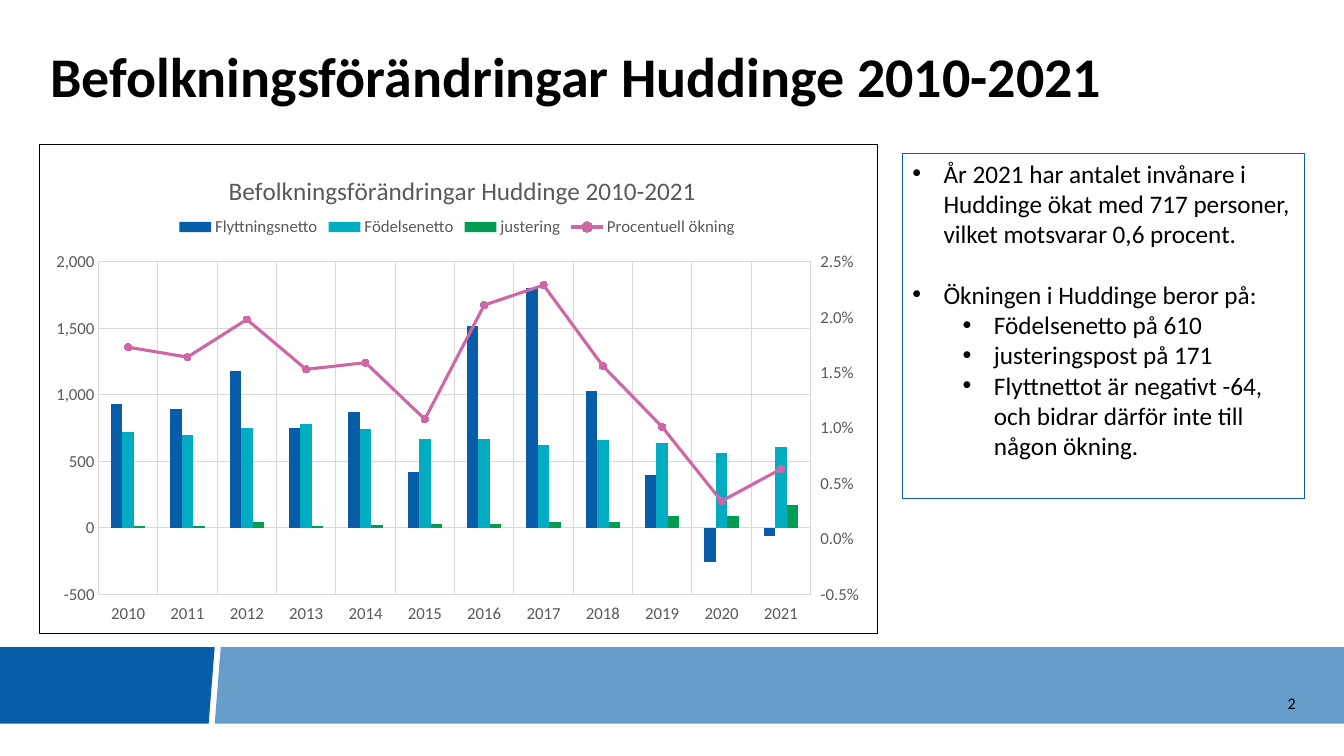
"""Build the Huddinge population change slide."""
from dataclasses import dataclass

from lxml import etree
from pptx import Presentation
from pptx.chart.data import CategoryChartData
from pptx.dml.color import RGBColor
from pptx.enum.chart import (XL_CHART_TYPE, XL_LEGEND_POSITION, XL_MARKER_STYLE,
                             XL_TICK_LABEL_POSITION, XL_TICK_MARK)
from pptx.enum.shapes import MSO_SHAPE
from pptx.enum.text import MSO_ANCHOR, PP_ALIGN
from pptx.oxml import parse_xml
from pptx.oxml.ns import nsdecls, qn
from pptx.util import Inches, Pt


@dataclass
class Theme:
    font: str = "Calibri"
    black: str = "000000"
    gray: str = "595959"
    grid: str = "D9D9D9"
    blue: str = "085DA9"
    sky: str = "669DCB"
    teal: str = "00ADC0"
    green: str = "009C52"
    pink: str = "CE68A5"
    title: float = 40
    body: float = 18
    label: float = 12
    page: float = 11.5


T = Theme()
TITLE = "Befolkningsförändringar Huddinge 2010-2021"
PAGE = "2"
NOTES = [
    (0, 0, "År 2021 har antalet invånare i Huddinge ökat med 717 personer, "
           "vilket motsvarar 0,6 procent."),
    (0, 21.6, "Ökningen i Huddinge beror på:"),
    (1, 0, "Födelsenetto på 610"),
    (1, 0, "justeringspost på 171"),
    (1, 0, "Flyttnettot är negativt -64, och bidrar därför inte till någon ökning."),
]
YEARS = [str(year) for year in range(2010, 2022)]
BARS = [
    ("Flyttningsnetto", T.blue,
     [930, 890, 1180, 750, 870, 420, 1520, 1800, 1030, 400, -260, -60]),
    ("Födelsenetto", T.teal,
     [720, 700, 750, 780, 740, 670, 670, 620, 660, 640, 560, 610]),
    ("justering", T.green, [10, 10, 40, 10, 20, 30, 30, 40, 40, 90, 90, 170]),
]
RATE = ("Procentuell ökning",
        [0.0173, 0.0164, 0.0198, 0.0153, 0.0159, 0.0108,
         0.0211, 0.0229, 0.0156, 0.0101, 0.0034, 0.0063])
BANDS = [
    (T.sky, [(2.19, 6.42), (13.33, 6.42), (13.33, 7.18), (2.13, 7.18)]),
    (T.blue, [(0, 6.42), (2.13, 6.42), (2.07, 7.18), (0, 7.18)]),
]
RIGHT_AXES = f"""<c:axes {nsdecls('c')}>
<c:valAx><c:axId val="9002"/>
<c:scaling><c:orientation val="minMax"/><c:max val="0.025"/><c:min val="-0.005"/></c:scaling>
<c:delete val="0"/><c:axPos val="r"/><c:numFmt formatCode="0.0%" sourceLinked="0"/>
<c:majorTickMark val="out"/><c:minorTickMark val="none"/><c:tickLblPos val="nextTo"/>
<c:crossAx val="9001"/><c:crosses val="max"/><c:crossBetween val="between"/>
<c:majorUnit val="0.005"/></c:valAx>
<c:catAx><c:axId val="9001"/><c:scaling><c:orientation val="minMax"/></c:scaling>
<c:delete val="1"/><c:axPos val="b"/><c:majorTickMark val="none"/>
<c:minorTickMark val="none"/><c:tickLblPos val="nextTo"/><c:crossAx val="9002"/>
<c:crosses val="autoZero"/></c:catAx></c:axes>"""


def color(code):
    return RGBColor.from_string(code)


def style(font, size, code, bold=False):
    font.name, font.size, font.bold = T.font, Pt(size), bold
    font.color.rgb = color(code)


def stroke(line, code, width):
    line.color.rgb, line.width = color(code), Pt(width)


def add_band(slide, code, points):
    spots = [(Inches(x), Inches(y)) for x, y in points]
    pen = slide.shapes.build_freeform(*spots[0])
    pen.add_line_segments(spots[1:], close=True)
    band = pen.convert_to_shape()
    band.shadow.inherit = False
    band.fill.solid()
    band.fill.fore_color.rgb = color(code)
    band.line.fill.background()


def add_text(slide, place, text, size, bold=False, align=PP_ALIGN.LEFT, space=1.0):
    frame = slide.shapes.add_textbox(*map(Inches, place)).text_frame
    frame.word_wrap, frame.vertical_anchor = True, MSO_ANCHOR.MIDDLE
    frame.text = text
    para = frame.paragraphs[0]
    para.alignment, para.line_spacing = align, space
    style(para.runs[0].font, size, T.black, bold)


def add_notes(slide):
    box = slide.shapes.add_shape(MSO_SHAPE.RECTANGLE,
                                 *map(Inches, (8.95, 1.52, 3.99, 3.43)))
    box.shadow.inherit = False
    box.fill.background()
    stroke(box.line, T.blue, 0.75)
    frame = box.text_frame
    frame.word_wrap, frame.vertical_anchor = True, MSO_ANCHOR.TOP
    for i, (level, gap, text) in enumerate(NOTES):
        para = frame.add_paragraph() if i else frame.paragraphs[0]
        para.text, para.level, para.alignment = text, level, PP_ALIGN.LEFT
        if gap:
            para.space_before = Pt(gap)
        props = para._p.get_or_add_pPr()
        props.set("marL", str(Inches(0.31 + 0.5 * level)))
        props.set("indent", str(Inches(-0.31)))
        etree.SubElement(props, qn("a:buFont")).set("typeface", "Arial")
        etree.SubElement(props, qn("a:buChar")).set("char", "•")
        style(para.runs[0].font, T.body, T.black)


def set_place(node, after, **spots):
    for old in node.findall(qn("c:layout")):
        node.remove(old)
    inner = '<c:layoutTarget val="inner"/>' if "w" in spots else ""
    modes = "".join(f'<c:{key}Mode val="edge"/>' for key in spots if key in "xy")
    sizes = "".join(f'<c:{key} val="{val}"/>' for key, val in spots.items())
    layout = parse_xml(f'<c:layout {nsdecls("c")}><c:manualLayout>{inner}{modes}{sizes}'
                       '</c:manualLayout></c:layout>')
    if after is None:
        node.insert(0, layout)
    else:
        node.find(qn(after)).addnext(layout)


def add_rate(chart):
    area = chart._chartSpace.chart.plotArea
    bars = area.find(qn("c:barChart"))
    ser = bars.findall(qn("c:ser"))[-1]
    for flag in ser.findall(qn("c:invertIfNegative")):
        ser.remove(flag)
    lines = parse_xml(f'<c:lineChart {nsdecls("c")}><c:grouping val="standard"/>'
                      '<c:varyColors val="0"/><c:marker val="1"/>'
                      '<c:axId val="9001"/><c:axId val="9002"/></c:lineChart>')
    lines.insert(2, ser)
    bars.addnext(lines)
    spot = area.findall(qn("c:valAx"))[-1]
    for axis in reversed(list(parse_xml(RIGHT_AXES))):
        spot.addnext(axis)
    rate = chart.plots[1].series[0]
    rate.smooth = False
    stroke(rate.format.line, T.pink, 2.25)
    rate.marker.style, rate.marker.size = XL_MARKER_STYLE.CIRCLE, 5
    rate.marker.format.fill.solid()
    rate.marker.format.fill.fore_color.rgb = color(T.pink)
    stroke(rate.marker.format.line, T.pink, 0.75)
    return type(chart.value_axis)(area.findall(qn("c:valAx"))[1])


def add_graph(slide):
    data = CategoryChartData(number_format="#,##0")
    data.categories = YEARS
    for name, _, values in BARS:
        data.add_series(name, values)
    data.add_series(*RATE, number_format="0.0%")
    chart = slide.shapes.add_chart(XL_CHART_TYPE.COLUMN_CLUSTERED,
                                   *map(Inches, (0.39, 1.43, 8.32, 4.86)), data).chart
    style(chart.font, T.label, T.black)
    plot = chart.plots[0]
    plot.gap_width, plot.overlap, plot.vary_by_categories = 219, 0, False
    for ser, (_, code, _) in zip(plot.series, BARS):
        ser.invert_if_negative = False
        ser.format.fill.solid()
        ser.format.fill.fore_color.rgb = color(code)
    cats, left, right = chart.category_axis, chart.value_axis, add_rate(chart)
    for axis in (cats, left, right):
        style(axis.tick_labels.font, T.label, T.gray)
        axis.format.line.fill.background()
    for axis in (cats, left):
        axis.major_tick_mark = XL_TICK_MARK.NONE
        axis.has_major_gridlines = True
        stroke(axis.major_gridlines.format.line, T.grid, 0.75)
    stroke(cats.format.line, T.grid, 0.75)
    cats.tick_label_position = XL_TICK_LABEL_POSITION.LOW
    left.minimum_scale, left.maximum_scale, left.major_unit = -500, 2000, 500
    left.tick_labels.number_format = "#,##0"
    left.tick_labels.number_format_is_linked = False
    chart.has_title = chart.has_legend = True
    chart.chart_title.text_frame.text = TITLE
    style(chart.chart_title.text_frame.paragraphs[0].runs[0].font, T.body, T.gray)
    chart.legend.position = XL_LEGEND_POSITION.TOP
    chart.legend.include_in_layout = False
    style(chart.legend.font, T.label, T.gray)
    root = chart._chartSpace
    set_place(root.chart.find(qn("c:title")), "c:tx", x=0.22, y=0.05)
    set_place(root.chart.find(qn("c:legend")), "c:legendPos", x=0.16, y=0.14)
    set_place(root.chart.plotArea, None, x=0.07, y=0.24, w=0.85, h=0.68)
    root.chart.addnext(parse_xml(
        f'<c:spPr {nsdecls("c", "a")}><a:noFill/><a:ln w="{Pt(0.75)}"><a:solidFill>'
        f'<a:srgbClr val="{T.black}"/></a:solidFill></a:ln></c:spPr>'))


def main():
    deck = Presentation()
    deck.slide_width, deck.slide_height = Inches(13.33), Inches(7.5)
    slide = deck.slides.add_slide(deck.slide_layouts[6])
    for code, points in BANDS:
        add_band(slide, code, points)
    add_text(slide, (0.4, 0.39, 12.38, 0.8), TITLE, T.title, bold=True, space=0.9)
    add_text(slide, (11.36, 6.77, 1.59, 0.4), PAGE, T.page, align=PP_ALIGN.RIGHT)
    add_notes(slide)
    add_graph(slide)
    deck.save("out.pptx")


if __name__ == "__main__":
    main()
